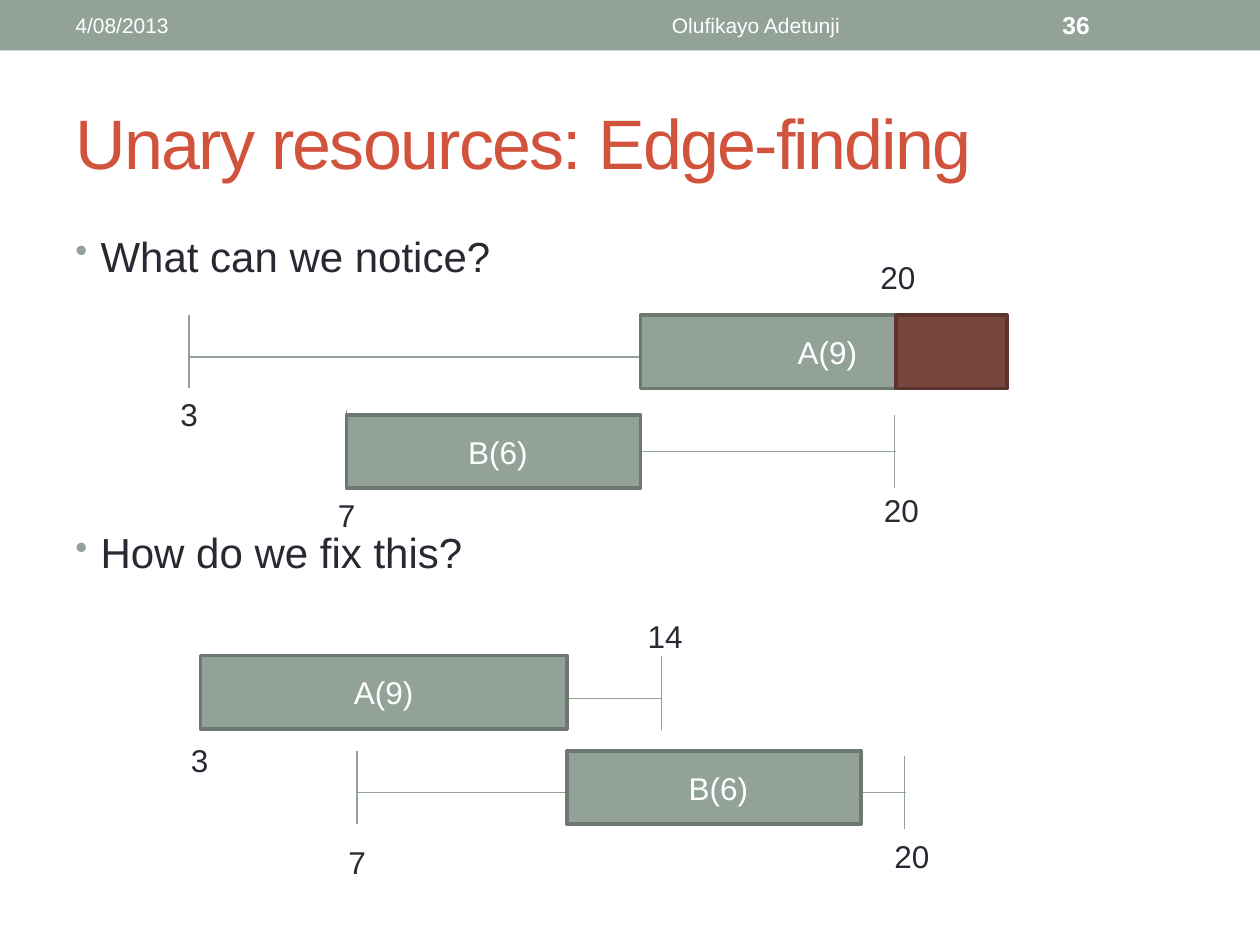
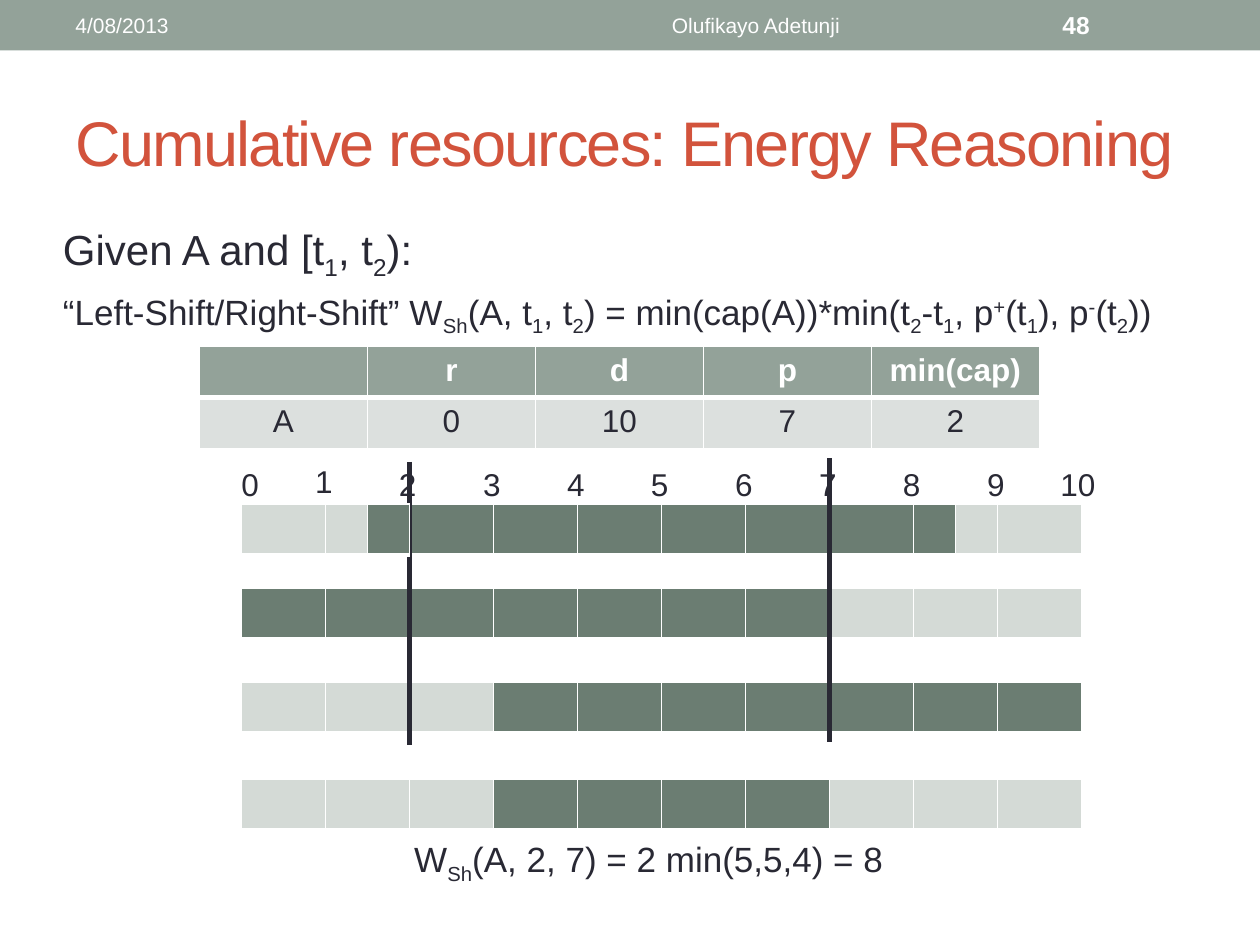
from dataclasses import dataclass

from lxml.etree import SubElement
from pptx import Presentation
from pptx.dml.color import RGBColor
from pptx.enum.shapes import MSO_CONNECTOR, MSO_SHAPE
from pptx.enum.text import MSO_ANCHOR, MSO_AUTO_SIZE, PP_ALIGN
from pptx.oxml.ns import qn
from pptx.util import Pt


@dataclass(frozen=True)
class Theme:
    font: str = "Arial"
    white: str = "FFFFFF"
    ink: str = "292934"
    title: str = "D2533C"
    sage: str = "93A299"
    sage_edge: str = "6D7871"
    overrun: str = "79463D"
    overrun_edge: str = "5A342D"
    table_body: str = "DCE0DE"
    idle: str = "D4DAD6"
    busy: str = "6B7D72"
    footer_size: float = 12
    number_size: float = 14
    label_size: float = 18
    formula_size: float = 20
    body_size: float = 24
    title_size: float = 40
    long_title_size: float = 36


THEME = Theme()
ROW_HEIGHT = 29.2
TASK_HEIGHT = 42
BASELINES = {"_": "-25000", "^": "30000"}


class SlideBuilder:
    """Holds the theme and the slide being built."""

    def __init__(self, presentation, theme):
        self.presentation = presentation
        self.theme = theme
        self.slide = None

    # Text helpers
    def format_paragraph(self, paragraph, size, color, bold=False, align=PP_ALIGN.LEFT):
        paragraph.alignment = align
        for run in paragraph.runs:
            run.font.name = self.theme.font
            run.font.size = Pt(size)
            run.font.bold = bold
            run.font.color.rgb = RGBColor.from_string(color)

    def write_formula(self, paragraph, markup, size, align=PP_ALIGN.LEFT):
        """Pieces are split by |; a leading _ lowers and ^ raises a piece."""
        for piece in markup.split("|"):
            baseline = BASELINES.get(piece[0])
            run = paragraph.add_run()
            run.text = piece[1:] if baseline else piece
            if baseline:
                run._r.get_or_add_rPr().set("baseline", baseline)
        self.format_paragraph(paragraph, size, self.theme.ink, align=align)

    def add_bullet(self, paragraph):
        properties = paragraph._p.get_or_add_pPr()
        properties.set("marL", str(Pt(14.4)))
        properties.set("indent", str(Pt(-14.4)))
        color = SubElement(properties, qn("a:buClr"))
        SubElement(color, qn("a:srgbClr"), val=self.theme.sage)
        SubElement(properties, qn("a:buSzPct"), val="85000")
        SubElement(properties, qn("a:buChar"), char="•")

    # Slide frame
    def start(self, title, number, title_size):
        theme = self.theme
        self.slide = self.presentation.slides.add_slide(self.presentation.slide_layouts[5])
        self.box(0, 0, 720, 28.8, theme.sage)
        self.title(title, title_size)
        for text, left, width, size, bold, align in (
            ("4/08/2013", 36, 228, theme.footer_size, False, PP_ALIGN.LEFT),
            ("Olufikayo Adetunji", 270, 324, theme.footer_size, False, PP_ALIGN.CENTER),
            (str(number), 600, 84, theme.number_size, True, PP_ALIGN.LEFT),
        ):
            text_frame = self.text_box(left, 1.44, width, 25.92)
            text_frame.vertical_anchor = MSO_ANCHOR.MIDDLE
            text_frame.text = text
            self.format_paragraph(text_frame.paragraphs[0], size, theme.white, bold, align)

    def title(self, text, size):
        shape = self.slide.shapes.title
        shape.left, shape.top, shape.width, shape.height = Pt(36), Pt(42), Pt(648), Pt(78)
        text_frame = shape.text_frame
        text_frame.text = text
        text_frame.auto_size = MSO_AUTO_SIZE.NONE
        text_frame.vertical_anchor = MSO_ANCHOR.MIDDLE
        paragraph = text_frame.paragraphs[0]
        self.format_paragraph(paragraph, size, self.theme.title)
        paragraph.runs[0]._r.get_or_add_rPr().set("spc", "-100")

    # Elements
    def text_box(self, left, top, width, height, inset=True):
        shape = self.slide.shapes.add_textbox(Pt(left), Pt(top), Pt(width), Pt(height))
        text_frame = shape.text_frame
        text_frame.word_wrap = True
        if not inset:
            text_frame.margin_left = text_frame.margin_right = 0
            text_frame.margin_top = text_frame.margin_bottom = 0
        return text_frame

    def label(self, text, left, top, width=48, height=29, inset=True):
        text_frame = self.text_box(left, top, width, height, inset)
        text_frame.text = text
        self.format_paragraph(text_frame.paragraphs[0], self.theme.label_size, self.theme.ink)

    def box(self, left, top, width, height, fill, edge=None, text=""):
        shape = self.slide.shapes.add_shape(
            MSO_SHAPE.RECTANGLE, Pt(left), Pt(top), Pt(width), Pt(height))
        shape.shadow.inherit = False
        shape.fill.solid()
        shape.fill.fore_color.rgb = RGBColor.from_string(fill)
        if edge:
            shape.line.color.rgb = RGBColor.from_string(edge)
            shape.line.width = Pt(2.08)
        else:
            shape.line.fill.background()
        if text:
            shape.text_frame.text = text
            shape.text_frame.vertical_anchor = MSO_ANCHOR.MIDDLE
            self.format_paragraph(shape.text_frame.paragraphs[0], self.theme.label_size,
                                  self.theme.white, align=PP_ALIGN.CENTER)
        return shape

    def task(self, text, left, top, width):
        return self.box(left, top, width, TASK_HEIGHT,
                        self.theme.sage, self.theme.sage_edge, text)

    def line(self, start_x, start_y, end_x, end_y, color, width=0.75):
        connector = self.slide.shapes.add_connector(
            MSO_CONNECTOR.STRAIGHT, Pt(start_x), Pt(start_y), Pt(end_x), Pt(end_y))
        connector.line.color.rgb = RGBColor.from_string(color)
        connector.line.width = Pt(width)
        SubElement(connector._element.spPr, qn("a:effectLst"))
        return connector

    def time_window(self, start, end, level, ticks):
        """A horizontal span with a vertical tick at each (x, top)."""
        for x, top in ticks:
            self.line(x, top, x, top + TASK_HEIGHT, self.theme.sage)
        return self.line(start, level, end, level, self.theme.sage)

    def table(self, left, top, column_width, fills, texts=None):
        """Rows of cell fills, with optional rows of texts; the first row is the header."""
        columns = len(fills[0])
        table = self.slide.shapes.add_table(
            len(fills), columns, Pt(left), Pt(top),
            Pt(column_width * columns), Pt(ROW_HEIGHT * len(fills))).table
        table.horz_banding = False
        for column in table.columns:
            column.width = Pt(column_width)
        for row, row_fills in enumerate(fills):
            table.rows[row].height = Pt(ROW_HEIGHT)
            for column, fill in enumerate(row_fills):
                cell = table.cell(row, column)
                header = row == 0
                self.cell_borders(cell, top=1 if header else 3, bottom=3 if header else 1)
                cell.fill.solid()
                cell.fill.fore_color.rgb = RGBColor.from_string(fill)
                if texts and texts[row][column]:
                    cell.text_frame.text = texts[row][column]
                    self.format_paragraph(
                        cell.text_frame.paragraphs[0], self.theme.label_size,
                        self.theme.white if header else self.theme.ink,
                        header, PP_ALIGN.CENTER)

    def cell_borders(self, cell, top, bottom):
        properties = cell._tc.get_or_add_tcPr()
        for side, width in (("L", 1), ("R", 1), ("T", top), ("B", bottom)):
            border = SubElement(properties, qn(f"a:ln{side}"), w=str(Pt(width)))
            fill = SubElement(border, qn("a:solidFill"))
            SubElement(fill, qn("a:srgbClr"), val=self.theme.white)

    def usage_bar(self, left, top, unit, pattern):
        """One row of time units: # is busy, - is idle."""
        shades = {"#": self.theme.busy, "-": self.theme.idle}
        self.table(left, top, unit, [[shades[mark] for mark in pattern]])


def build_edge_finding(builder):
    theme = builder.theme
    builder.start("Unary resources: Edge-finding", 36, theme.title_size)

    # Questions, with room for the first diagram between them
    text_frame = builder.text_box(36, 128, 648, 382)
    text_frame.text = "What can we notice?\nHow do we fix this?"
    for paragraph, gap in zip(text_frame.paragraphs, (0, 140.4)):
        paragraph.space_before = Pt(gap)
        builder.format_paragraph(paragraph, theme.body_size, theme.ink)
        builder.add_bullet(paragraph)

    # Time windows behind the tasks
    builder.time_window(108, 510, 204, [(108, 180), (512, 180)])
    window_b = builder.time_window(198, 512, 258, [(198, 234), (511, 237)])
    builder.time_window(114, 378, 399, [(114, 375), (378, 375)])
    builder.time_window(204, 518, 453, [(204, 429), (517, 432)])

    # Tasks, with the part of A that overruns its deadline
    task_b = builder.task(" B(6)", 198, 237, 168)
    window_b.begin_connect(task_b, 1)
    builder.task("A(9)", 114.5, 374.5, 209.5)
    builder.task(" B(6)", 324, 429, 168)
    builder.task(" A(9)", 366, 180, 209.5)
    builder.box(512, 180, 63.5, TASK_HEIGHT, theme.overrun, theme.overrun_edge)

    # Release times and deadlines
    for text, left, top in (
        ("3", 96, 222), ("20", 496, 144), ("20", 498, 277), ("7", 186, 280),
        ("3", 102, 420), ("14", 363, 349), ("20", 504, 475), ("7", 192, 478),
    ):
        builder.label(text, left, top)


def build_energy_reasoning(builder):
    theme = builder.theme
    builder.start("Cumulative resources: Energy Reasoning", 48, theme.long_title_size)

    # Formulas above and below the diagram
    text_frame = builder.text_box(36, 128, 648, 382, inset=False)
    given = text_frame.paragraphs[0]
    builder.write_formula(given, "Given A and [t|_1|, t|_2|):", theme.body_size)
    shift = text_frame.add_paragraph()
    shift.space_before = Pt(5)
    builder.write_formula(
        shift,
        "“Left-Shift/Right-Shift” W|_Sh|(A, t|_1|, t|_2|) = min(cap(A))*min(t|_2|-t|_1"
        "|, p|^+|(t|_1|), p|^-|(t|_2|))",
        theme.formula_size)
    result = text_frame.add_paragraph()
    result.space_before = Pt(285.5)
    builder.write_formula(result, "W|_Sh|(A, 2, 7) = 2 min(5,5,4) = 8",
                          theme.formula_size, PP_ALIGN.CENTER)
    result._p.get_or_add_pPr().set("marL", str(Pt(21.6)))

    # Task data
    builder.table(114, 198, 96, [[theme.sage] * 5, [theme.table_body] * 5],
                  [["", "r", "d", "p", "min(cap)"], ["A", "0", "10", "7", "2"]])

    # Usage over ten time units
    axis_left, unit = 138, 48
    for top, pattern in ((288, "--######--"), (336, "#######---"), (390, "---#######")):
        builder.usage_bar(axis_left, top, unit, pattern)

    # Time axis: inner numbers sit left of their grid line
    for time in range(11):
        left = axis_left + unit * time - 6
        left += {0: 6, 10: -6}.get(time, 0)
        builder.label(str(time), left, 264 if time == 1 else 266, 24, 21.6, inset=False)

    # Interval from 2 to 7
    for time, top in ((2, 264), (7, 262)):
        x = axis_left + unit * time
        builder.line(x, top, x, top + 162, theme.ink, 2.75)

    # Half units at both ends of the first bar, then the overlap
    for time, pattern in ((1, "-#"), (8, "#-")):
        builder.usage_bar(axis_left + unit * time, 288, unit / 2, pattern)
    builder.usage_bar(axis_left, 445, unit, "---####---")


def main():
    presentation = Presentation()
    presentation.slide_width, presentation.slide_height = Pt(720), Pt(540)
    builder = SlideBuilder(presentation, THEME)
    build_edge_finding(builder)
    build_energy_reasoning(builder)
    presentation.save("out.pptx")


if __name__ == "__main__":
    main()
